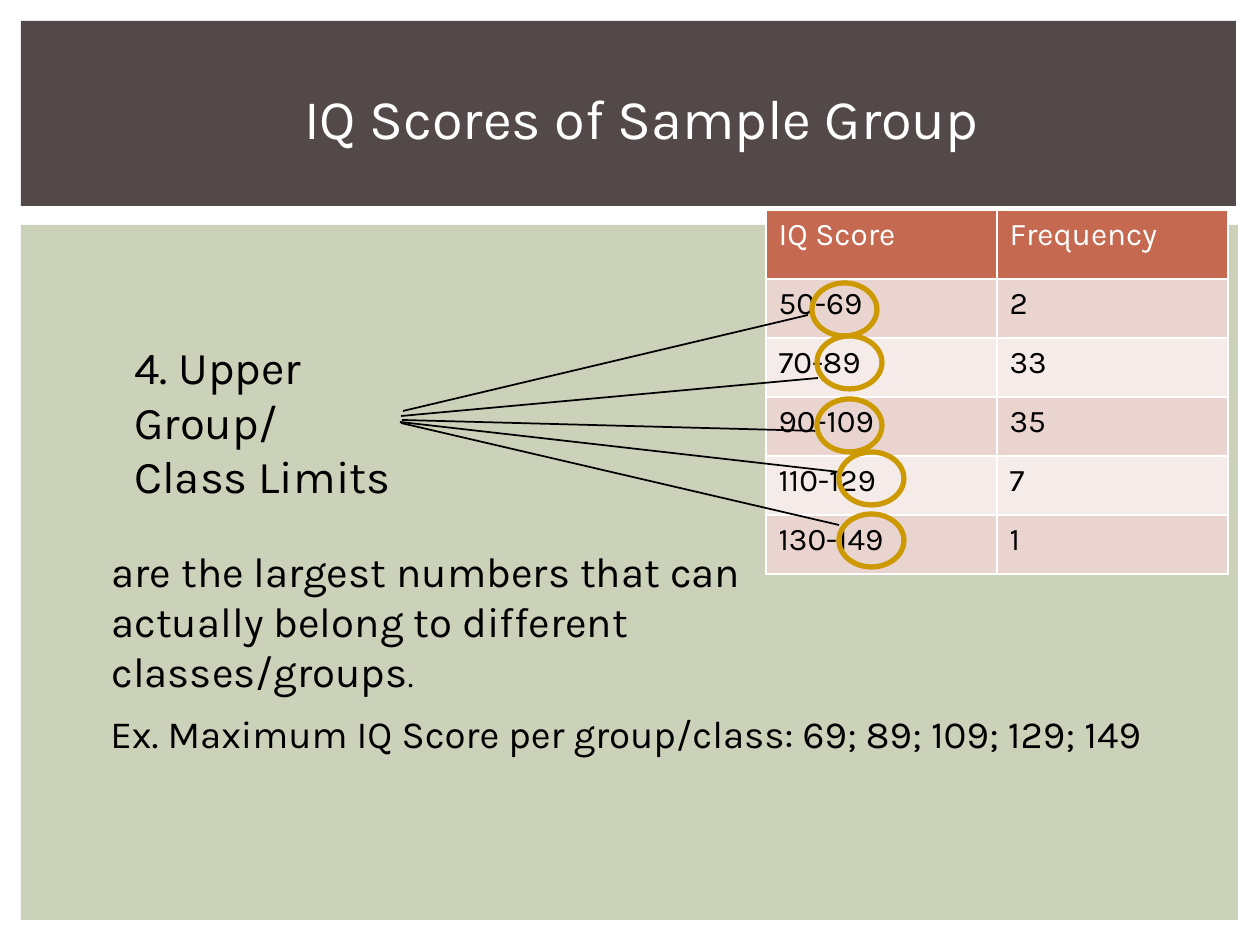
from lxml import etree
from pptx import Presentation
from pptx.dml.color import RGBColor
from pptx.enum.shapes import MSO_CONNECTOR, MSO_SHAPE
from pptx.enum.text import MSO_ANCHOR, PP_ALIGN
from pptx.oxml.ns import qn
from pptx.util import Emu, Pt

RECTANGLE, OVAL = MSO_SHAPE.RECTANGLE, MSO_SHAPE.OVAL
STRAIGHT = MSO_CONNECTOR.STRAIGHT
TOP, MIDDLE = MSO_ANCHOR.TOP, MSO_ANCHOR.MIDDLE
LEFT, CENTER = PP_ALIGN.LEFT, PP_ALIGN.CENTER

WHITE = RGBColor(0xFF, 0xFF, 0xFF)
BLACK = RGBColor(0x00, 0x00, 0x00)
BROWN = RGBColor(0x53, 0x49, 0x49)
SAGE = RGBColor(0xCC, 0xD1, 0xB9)
RUST = RGBColor(0xC6, 0x69, 0x51)
ROSE = RGBColor(0xEA, 0xD4, 0xD0)
PALE_ROSE = RGBColor(0xF5, 0xEB, 0xE9)
GOLD = RGBColor(0xCC, 0x99, 0x00)

FONT = "Karla"
PX_PER_INCH = 126

SCORES = [
    ("IQ Score", "Frequency"),
    ("50-69", "2"),
    ("70-89", "33"),
    ("90-109", "35"),
    ("110-129", "7"),
    ("130-149", "1"),
]
HEADER_HEIGHT, ROW_HEIGHT = 69, 59

# Relative to the table: left and top of each ring, then the pointer's end.
LIMITS = [
    ((46, 73), (42, 105)),
    ((51, 126), (52, 168)),
    ((51, 189), (52, 221)),
    ((73, 242), (73, 262)),
    ((73, 304), (73, 315)),
]
POINTER_STARTS = [(403, 411), (401, 416), (402, 420), (400, 422), (401, 423)]
RING_SIZE = (65, 53)


def px(length):
    return Emu(round(length * 914400 / PX_PER_INCH))


def scaled(box):
    return [px(length) for length in box]


def style_run(run, size, color):
    run.font.name = FONT
    run.font.size = Pt(size)
    run.font.color.rgb = color
    run.font.bold = False


def add_panel(slide, box, color):
    shape = slide.shapes.add_shape(RECTANGLE, *scaled(box))
    shape.shadow.inherit = False
    shape.fill.solid()
    shape.fill.fore_color.rgb = color
    shape.line.fill.background()


def add_text(slide, box, paragraphs, color=BLACK, align=LEFT, anchor=TOP):
    """Each paragraph is a list of (text, size) runs."""
    text_box = slide.shapes.add_textbox(*scaled(box))
    frame = text_box.text_frame
    frame.word_wrap = True
    frame.vertical_anchor = anchor
    for index, runs in enumerate(paragraphs):
        paragraph = frame.add_paragraph() if index else frame.paragraphs[0]
        paragraph.alignment = align
        for text, size in runs:
            run = paragraph.add_run()
            run.text = text
            style_run(run, size, color)


def add_score_table(slide, box):
    frame = slide.shapes.add_table(len(SCORES), len(SCORES[0]), *scaled(box))
    table = frame.table
    for row_index, values in enumerate(SCORES):
        is_header = row_index == 0
        table.rows[row_index].height = px(HEADER_HEIGHT if is_header else ROW_HEIGHT)
        band = ROSE if row_index % 2 else PALE_ROSE
        for column_index, value in enumerate(values):
            cell = table.cell(row_index, column_index)
            cell.fill.solid()
            cell.fill.fore_color.rgb = RUST if is_header else band
            cell.text_frame.text = value
            run = cell.text_frame.paragraphs[0].runs[0]
            style_run(run, 18, WHITE if is_header else BLACK)


def add_pointer(slide, start, end):
    connector = slide.shapes.add_connector(STRAIGHT, *scaled(start + end))
    connector.line.color.rgb = BLACK
    connector.line.width = Pt(1)
    properties = connector._element.find(qn("p:spPr"))
    etree.SubElement(properties, qn("a:effectLst"))


def add_ring(slide, box):
    ring = slide.shapes.add_shape(OVAL, *scaled(box))
    ring.shadow.inherit = False
    ring.fill.background()
    ring.line.color.rgb = GOLD
    ring.line.width = Pt(3)


def add_limit_marks(slide, table_box):
    """Ring every upper limit and point at it from the label."""
    left, top = table_box[:2]
    for start, (ring, end) in zip(POINTER_STARTS, LIMITS):
        add_pointer(slide, start, (left + end[0], top + end[1]))
        add_ring(slide, (left + ring[0], top + ring[1]) + RING_SIZE)


def build_slide(presentation):
    slide = presentation.slides.add_slide(presentation.slide_layouts[6])
    add_panel(slide, (21, 225, 1217, 695), SAGE)
    add_panel(slide, (21, 21, 1215, 185), BROWN)

    table_box = (766, 210, 462, HEADER_HEIGHT + 5 * ROW_HEIGHT)
    add_score_table(slide, table_box)
    add_text(slide, (50, 29, 1184, 176), [[("IQ Scores of Sample Group", 32)]],
             WHITE, CENTER, MIDDLE)
    add_text(slide, (122, 333, 300, 181),
             [[("4. Upper Group/", 26)], [("Class Limits", 26)]])
    add_limit_marks(slide, table_box)
    add_text(slide, (99, 539, 664, 217),
             [[("are the largest numbers that can actually belong to "
                "different classes/groups", 24), (".", 18)]])
    add_text(slide, (98, 704, 1100, 106),
             [[("Ex. Maximum IQ Score per group/class: 69; 89; 109; 129; 149", 22)]])


def main():
    presentation = Presentation()
    presentation.slide_width = px(10 * PX_PER_INCH)
    presentation.slide_height = px(7.5 * PX_PER_INCH)
    build_slide(presentation)
    presentation.save("out.pptx")


if __name__ == "__main__":
    main()
